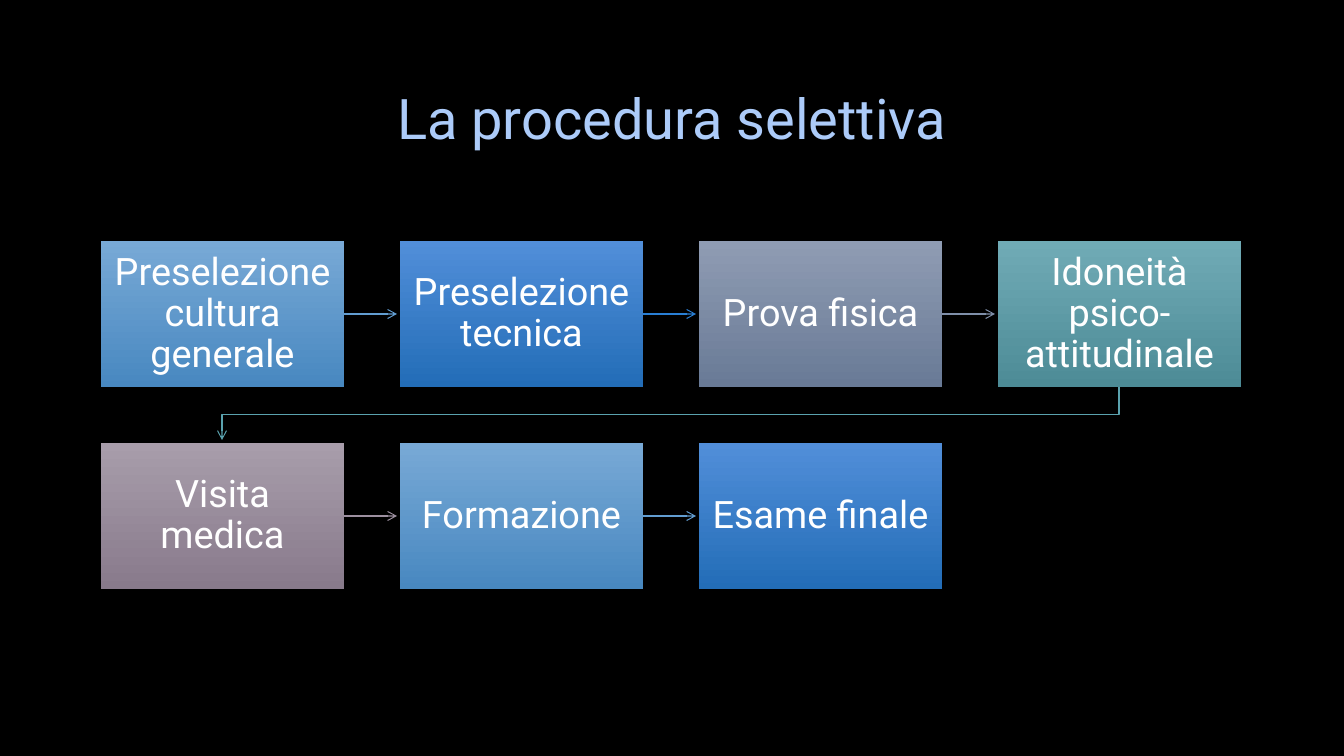
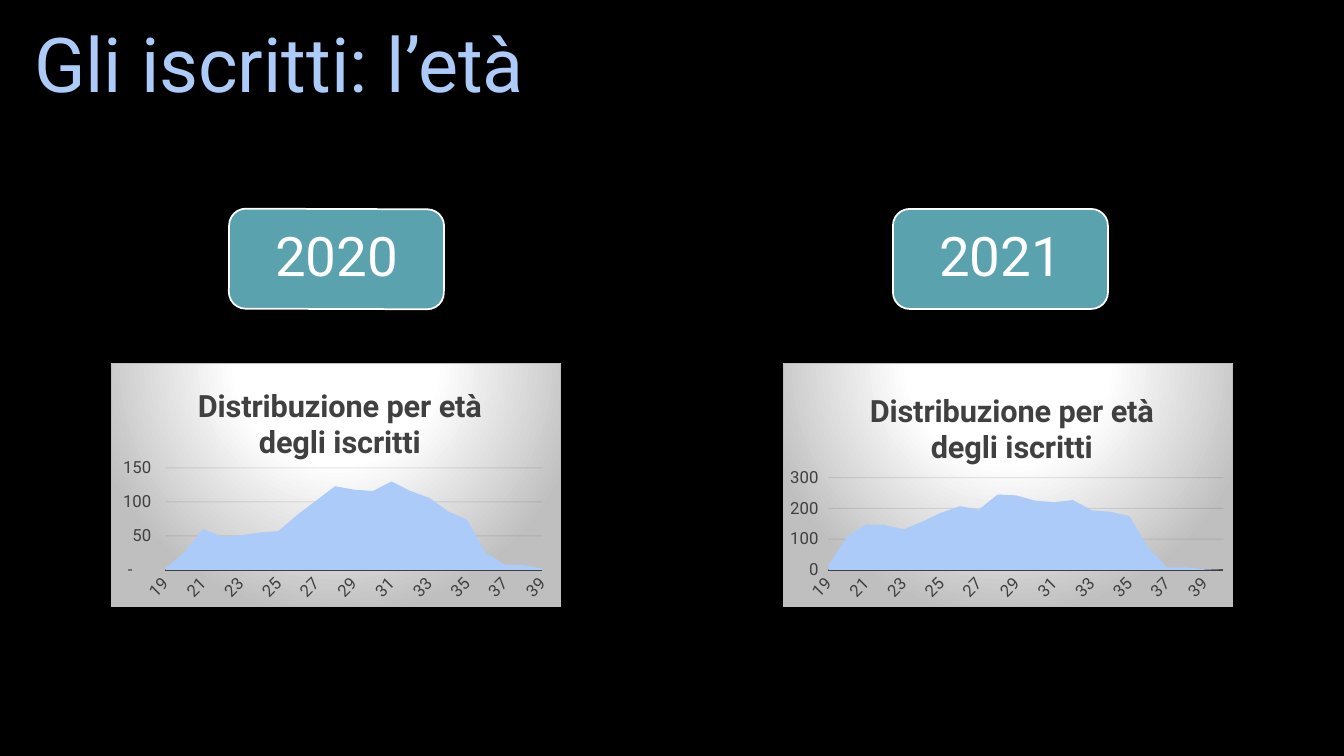
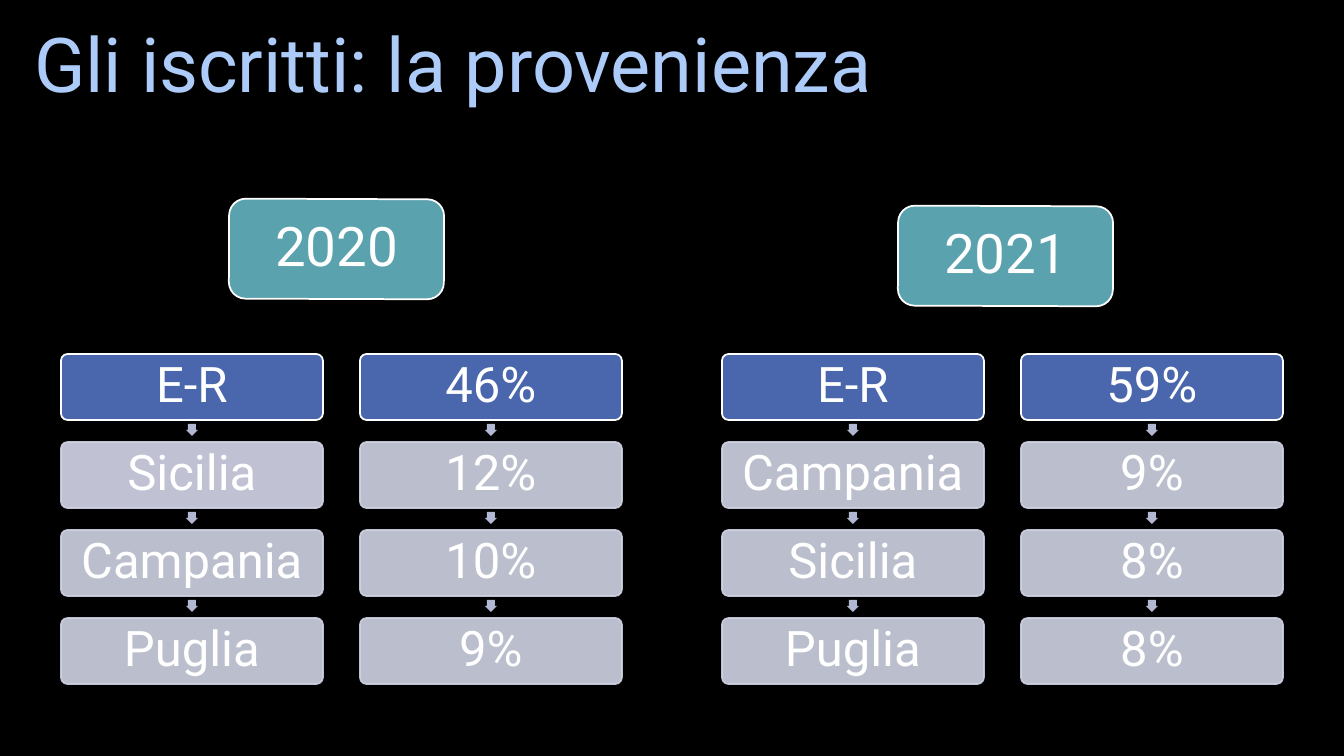
from lxml.etree import SubElement
from pptx import Presentation
from pptx.chart.data import CategoryChartData
from pptx.dml.color import RGBColor
from pptx.enum.chart import XL_CHART_TYPE, XL_TICK_MARK
from pptx.enum.shapes import MSO_CONNECTOR, MSO_SHAPE
from pptx.enum.text import MSO_ANCHOR, MSO_AUTO_SIZE, PP_ALIGN
from pptx.oxml import parse_xml
from pptx.oxml.ns import nsdecls, qn
from pptx.util import Emu, Pt

EMU_PER_PX = 914400 / 100.8
FONT = "Roboto"
COLOURS = {
    "background": "000000", "title": "ACCBF9", "text": "FFFFFF",
    "badge": "5AA2AE", "leader": "4A66AC", "muted": "D0D3E3",
    "second": "C0C2D4", "marker": "B2B8D2", "axis": "404040",
    "grid": "0D0D0D", "area": "ACCBF9", "panel": "BFBFBF",
}
STEP_COLOURS = {
    "sky": ("78A9D6", "4888C0", "629DD1"),
    "blue": ("518ED9", "236DB7", "297FD5"),
    "slate": ("8F9CB3", "697A96", "7F8FA9"),
    "teal": ("70ABB6", "4D8B96", "5AA2AE"),
    "mauve": ("A89DAB", "887A8B", "9D90A0"),
}
STEPS = [
    ("Preselezione cultura generale", "sky"),
    ("Preselezione tecnica", "blue"),
    ("Prova fisica", "slate"),
    ("Idoneità psico-attitudinale", "teal"),
    ("Visita medica", "mauve"),
    ("Formazione", "sky"),
    ("Esame finale", "blue"),
]
STEPS_PER_ROW = 4
STEP_LEFT, STEP_TOP, STEP_WIDTH, STEP_HEIGHT = 101, 241, 243, 146
STEP_PITCH_X, STEP_PITCH_Y = 299, 202
ARROW_GAP = 3
CARD_WIDTH, CARD_HEIGHT, CARD_TOP, CARD_PITCH = 262, 66, 354, 88
MARKER_SIZE = 12

AGES = [str(age) for age in range(19, 40)]
ENROLLED_2020 = [2, 26, 60, 49, 51, 55, 57, 81, 102, 123, 118, 116, 130, 116,
                 106, 86, 74, 25, 8, 7, 2]
ENROLLED_2021 = [15, 109, 148, 146, 132, 157, 186, 207, 196, 245, 242, 225,
                 220, 227, 194, 189, 175, 74, 8, 8, 2, None]
DASH_FOR_ZERO = '_-* #,##0_-;\\-* #,##0_-;_-* "-"??_-;_-@_'
RANKINGS = [
    (61, ["E-R", "Sicilia", "Campania", "Puglia"]),
    (360, ["46%", "12%", "10%", "9%"]),
    (722, ["E-R", "Campania", "Sicilia", "Puglia"]),
    (1021, ["59%", "9%", "8%", "8%"]),
]


def px(length):
    return Emu(round(length * EMU_PER_PX))


def rgb(colour):
    return RGBColor.from_string(COLOURS.get(colour, colour))


def style_font(font, size, colour, bold=False):
    font.name, font.size, font.bold = FONT, Pt(size), bold
    font.color.rgb = rgb(colour)


def write_text(frame, text, size, colour="text", align=PP_ALIGN.CENTER,
               inset=None, spacing=0.9, bold=False):
    paragraph = frame.paragraphs[0]
    paragraph.alignment = align
    paragraph.line_spacing = spacing
    run = paragraph.add_run()
    run.text = text
    style_font(run.font, size, colour, bold)
    if inset is not None:
        frame.word_wrap = True
        frame.vertical_anchor = MSO_ANCHOR.MIDDLE
        frame.margin_left = frame.margin_right = px(inset)
        frame.margin_top = frame.margin_bottom = px(inset)


def set_line(line, colour, width):
    line.color.rgb = rgb(colour)
    line.width = Pt(width)


def set_opacity(fill_owner, percent):
    for colour in fill_owner.iter(qn("a:srgbClr")):
        SubElement(colour, qn("a:alpha")).set("val", str(percent * 1000))


def add_block(slide, preset, left, top, width, height, fill=None, line=None):
    block = slide.shapes.add_shape(preset, px(left), px(top), px(width), px(height))
    block.shadow.inherit = False
    if fill:
        block.fill.solid()
        block.fill.fore_color.rgb = rgb(fill)
    if line:
        set_line(block.line, line, 1.25)
    else:
        block.line.fill.background()
    return block


def add_titled_slide(prs, text, left, top, size, align):
    slide = prs.slides.add_slide(prs.slide_layouts[5])
    title = slide.shapes.title
    title.left, title.top, title.width, title.height = (
        px(left), px(top), px(1141), px(107))
    title.text_frame.auto_size = MSO_AUTO_SIZE.NONE
    title.text_frame.vertical_anchor = MSO_ANCHOR.MIDDLE
    write_text(title.text_frame, text, size, colour="title", align=align)
    return slide


def add_badge(slide, year, left, top, tilt=0.2):
    badge = add_block(slide, MSO_SHAPE.ROUNDED_RECTANGLE, left, top, 215, 100,
                      fill="badge", line="text")
    badge.rotation = tilt
    write_text(badge.text_frame, year, 39, inset=16)


def add_step(slide, text, shades, left, top):
    step = add_block(slide, MSO_SHAPE.RECTANGLE, left, top, STEP_WIDTH, STEP_HEIGHT)
    step.fill.gradient()
    step.fill.gradient_angle = 270
    for stop, shade in zip(step.fill.gradient_stops, shades):
        stop.color.rgb = rgb(shade)
    write_text(step.text_frame, text, 27, inset=12)
    return step


def style_arrow(arrow, colour):
    set_line(arrow.line, colour, 0.75)
    outline = arrow.element.spPr.find(qn("a:ln"))
    SubElement(outline, qn("a:tailEnd")).set("type", "arrow")


def add_step_arrow(slide, step, left, top, colour):
    start, middle = left + STEP_WIDTH, top + STEP_HEIGHT // 2
    end = left + STEP_PITCH_X - ARROW_GAP
    arrow = slide.shapes.add_connector(
        MSO_CONNECTOR.STRAIGHT, px(start), px(middle), px(end), px(middle))
    arrow.begin_connect(step, 3)
    style_arrow(arrow, colour)
    SubElement(arrow.element.spPr, qn("a:effectLst"))


def add_row_return(slide, left, top, colour):
    start_x = left + STEP_WIDTH // 2
    end_x = STEP_LEFT + STEP_WIDTH // 2
    bottom, next_top = top + STEP_HEIGHT, top + STEP_PITCH_Y
    bend = (bottom + next_top) // 2
    builder = slide.shapes.build_freeform(start_x, bottom, scale=EMU_PER_PX)
    builder.add_line_segments(
        [(start_x, bend), (end_x, bend), (end_x, next_top - ARROW_GAP)], close=False)
    row_return = builder.convert_to_shape()
    row_return.shadow.inherit = False
    row_return.fill.background()
    style_arrow(row_return, colour)


def add_ranking(slide, left, entries):
    for rank, entry in enumerate(entries):
        top = CARD_TOP + rank * CARD_PITCH
        second = (left, entry) == (RANKINGS[0][0], "Sicilia")
        fill = "leader" if rank == 0 else "second" if second else "muted"
        card = add_block(slide, MSO_SHAPE.ROUNDED_RECTANGLE, left, top,
                         CARD_WIDTH, CARD_HEIGHT, fill=fill,
                         line="muted" if rank else "text")
        card.adjustments[0] = 0.1
        if rank:
            set_opacity(card.element.spPr.find(qn("a:ln")), 90)
        if fill == "muted":
            set_opacity(card.element.spPr.find(qn("a:solidFill")), 90)
        write_text(card.text_frame, entry, 35, inset=5)
        if rank < len(entries) - 1:
            marker = add_block(slide, MSO_SHAPE.DOWN_ARROW,
                               left + (CARD_WIDTH - MARKER_SIZE) // 2, top + 70,
                               MARKER_SIZE, MARKER_SIZE, fill="marker")
            marker.adjustments[0], marker.adjustments[1] = 0.67, 0.5


def set_layout(owner, index, **fractions):
    for layout in owner.findall(qn("c:layout")):
        owner.remove(layout)
    target = '<c:layoutTarget val="inner"/>' if "w" in fractions else ""
    modes = "".join(f'<c:{key}Mode val="edge"/>' for key in ("x", "y"))
    values = "".join(f'<c:{key} val="{value}"/>' for key, value in fractions.items())
    owner.insert(index, parse_xml(
        f'<c:layout {nsdecls("c")}><c:manualLayout>{target}{modes}{values}'
        '</c:manualLayout></c:layout>'))


def set_chart_panel(chart):
    stops = "".join(
        f'<a:gs pos="{position}"><a:srgbClr val="{COLOURS[colour]}"/></a:gs>'
        for position, colour in ((0, "text"), (39000, "text"), (100000, "panel")))
    chart.element.find(qn("c:chart")).addnext(parse_xml(
        f'<c:spPr {nsdecls("c", "a")}><a:gradFill><a:gsLst>{stops}</a:gsLst>'
        '<a:path path="circle">'
        '<a:fillToRect l="50000" t="-80000" r="50000" b="180000"/></a:path>'
        '</a:gradFill><a:ln w="9525"><a:solidFill>'
        f'<a:srgbClr val="{COLOURS["panel"]}"/></a:solidFill></a:ln></c:spPr>'))


def style_axes(chart, step, number_format):
    ages, counts = chart.category_axis, chart.value_axis
    for axis in (ages, counts):
        style_font(axis.tick_labels.font, 12, "axis")
    ages.major_tick_mark = XL_TICK_MARK.NONE
    set_line(ages.format.line, "axis", 1.5)
    label_body = chart.element.find(".//" + qn("c:catAx")).find(
        qn("c:txPr")).find(qn("a:bodyPr"))
    label_body.set("rot", "-2700000")
    label_body.set("vert", "horz")
    counts.minimum_scale, counts.maximum_scale = 0, 3 * step
    counts.major_unit = step
    counts.format.line.fill.background()
    counts.has_major_gridlines = True
    set_line(counts.major_gridlines.format.line, "grid", 0.75)
    set_opacity(chart.element.find(".//" + qn("c:majorGridlines")), 10)
    counts.tick_labels.number_format = number_format
    counts.tick_labels.number_format_is_linked = False


def add_age_chart(slide, left, ages, enrolled, step, number_format, title_y, plot):
    data = CategoryChartData()
    data.categories = ages
    data.add_series("Series 1", enrolled)
    chart = slide.shapes.add_chart(
        XL_CHART_TYPE.AREA, px(left), px(363), px(450), px(244), data).chart
    style_font(chart.font, 10, "text")
    chart.has_legend = False
    chart.has_title = True
    write_text(chart.chart_title.text_frame, "Distribuzione per età degli iscritti",
               22, colour="axis", spacing=1, bold=True)
    distribution = chart.plots[0]
    distribution.vary_by_categories = False
    area = distribution.series[0].format
    area.fill.solid()
    area.fill.fore_color.rgb = rgb("area")
    area.line.fill.background()
    style_axes(chart, step, number_format)
    set_chart_panel(chart)
    set_layout(chart.element.find(".//" + qn("c:title")), 1, x=0.18, y=title_y)
    set_layout(chart.element.find(".//" + qn("c:plotArea")), 0, **plot)


def build_procedure(prs):
    slide = add_titled_slide(prs, "La procedura selettiva", 101, 68, 40, PP_ALIGN.CENTER)
    for index, (text, palette) in enumerate(STEPS):
        row, column = divmod(index, STEPS_PER_ROW)
        left = STEP_LEFT + column * STEP_PITCH_X
        top = STEP_TOP + row * STEP_PITCH_Y
        *shades, accent = STEP_COLOURS[palette]
        step = add_step(slide, text, shades, left, top)
        if index == len(STEPS) - 1:
            continue
        if column == STEPS_PER_ROW - 1:
            add_row_return(slide, left, top, accent)
        else:
            add_step_arrow(slide, step, left, top, accent)


def build_ages(prs):
    slide = add_titled_slide(prs, "Gli iscritti: l’età", 24, 15, 54, PP_ALIGN.LEFT)
    add_badge(slide, "2020", 229, 209)
    add_badge(slide, "2021", 893, 209, tilt=0)
    add_age_chart(slide, 111, AGES, ENROLLED_2020, 50, DASH_FOR_ZERO, 0.07,
                  dict(x=0.12, y=0.43, w=0.84, h=0.42))
    add_age_chart(slide, 783, AGES + [""], ENROLLED_2021, 100, "General", 0.09,
                  dict(x=0.1, y=0.47, w=0.88, h=0.38))


def build_origins(prs):
    slide = add_titled_slide(prs, "Gli iscritti: la provenienza", 24, 15, 54,
                             PP_ALIGN.LEFT)
    for left, entries in RANKINGS:
        add_ranking(slide, left, entries)
    add_badge(slide, "2020", 229, 199)
    add_badge(slide, "2021", 898, 206)


def main():
    prs = Presentation()
    prs.slide_width, prs.slide_height = px(1344), px(756)
    backdrop = prs.slide_master.background.fill
    backdrop.solid()
    backdrop.fore_color.rgb = rgb("background")
    build_procedure(prs)
    build_ages(prs)
    build_origins(prs)
    prs.save("out.pptx")


if __name__ == "__main__":
    main()
